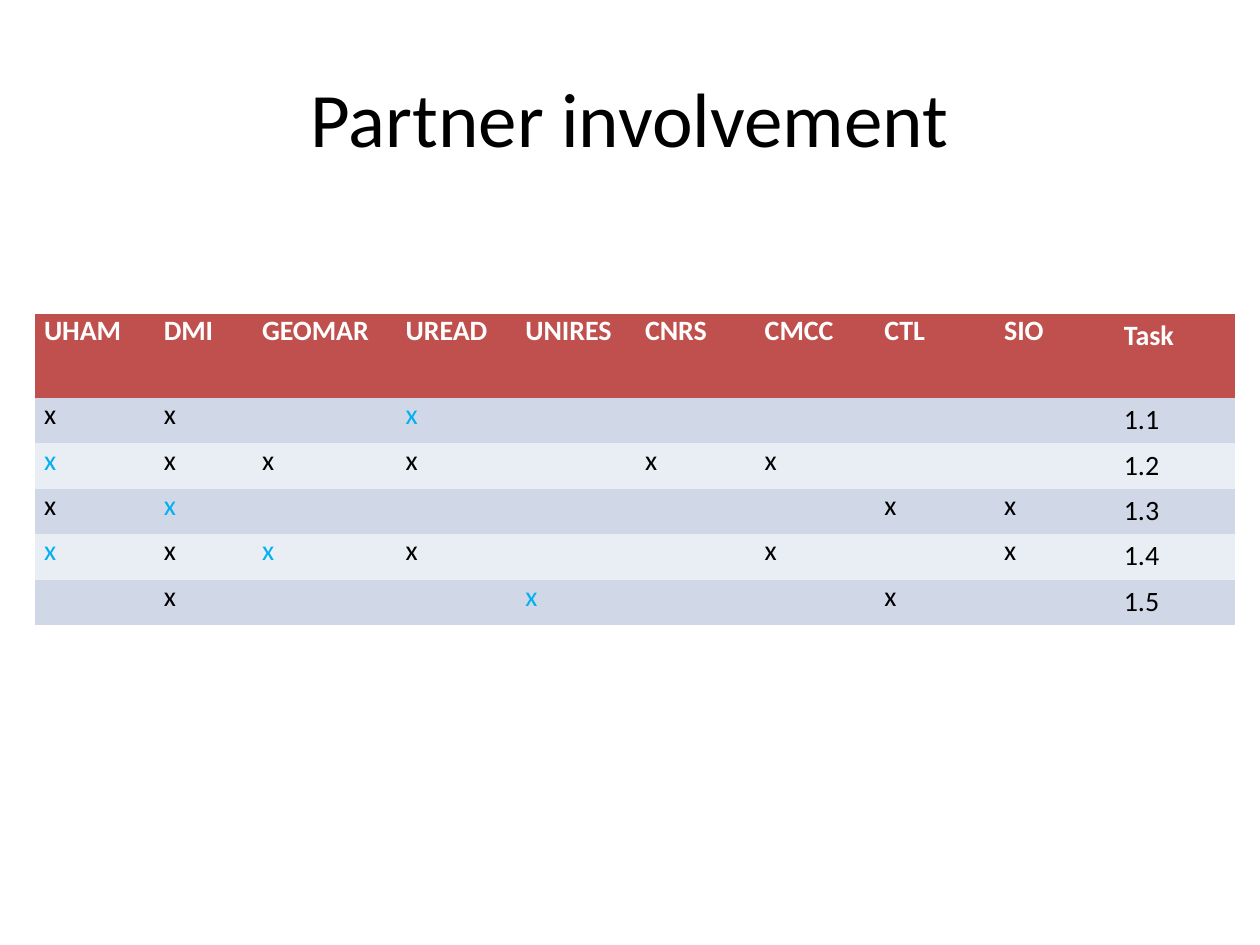
import pptx
import pptx.util
import pptx.dml.color
import pptx.enum.text

INK = {"text": "000000", "lead": "00B0F0", "head": "C0504D",
       "light": "FFFFFF", "odd": "D0D8E8", "even": "E9EDF4"}
PLAIN = "{2D5ABB26-0587-4C30-8999-92F81FD0307C}"
HEADS = ["UHAM", "DMI", "GEOMAR", "UREAD", "UNIRES",
         "CNRS", "CMCC", "CTL", "SIO", "Task"]
TASKS = {
    "1.1": "xx.L.....",
    "1.2": "Lxxx.xx..",
    "1.3": "xL.....xx",
    "1.4": "LxLx..x.x",
    "1.5": ".x..L..x.",
}
WIDTHS = [0.95, 0.78, 1.14] + [0.95] * 7
HIGHS = [0.67] + [0.36] * len(TASKS)
ALIGN = pptx.enum.text.PP_ALIGN
inch = pptx.util.Inches


def tint(name):
    return pptx.dml.color.RGBColor.from_string(INK[name])


def style(para, size, color, align, bold=False):
    para.alignment = align
    font = para.font
    font.name = "Calibri"
    font.size = pptx.util.Pt(size)
    font.bold = bold
    font.color.rgb = tint(color)


def add_title(slide, text):
    box = slide.shapes.add_textbox(inch(0.5), inch(0.3), inch(9), inch(1.25))
    frame = box.text_frame
    frame.word_wrap = True
    frame.vertical_anchor = pptx.enum.text.MSO_ANCHOR.MIDDLE
    para = frame.paragraphs[0]
    para.text = text
    style(para, 44, "text", ALIGN.CENTER)


def fill_cell(cell, text, color, back, last, bold):
    cell.fill.solid()
    cell.fill.fore_color.rgb = tint(back)
    cell.margin_left = cell.margin_right = inch(0.07)
    cell.margin_top = cell.margin_bottom = 0
    para = cell.text_frame.paragraphs[0]
    para.text = text
    style(para, 16, color, ALIGN.LEFT if last else ALIGN.JUSTIFY, bold)
    if last:
        para.line_spacing = 1.15


def add_grid(slide):
    rows = [HEADS] + [list(marks) + [task] for task, marks in TASKS.items()]
    shape = slide.shapes.add_table(
        len(rows), len(HEADS), inch(0.28), inch(2.49),
        inch(sum(WIDTHS)), inch(sum(HIGHS)))
    table = shape.table
    table.horz_banding = False
    table._tbl.tblPr[0].text = PLAIN
    for col, width in zip(table.columns, WIDTHS):
        col.width = inch(width)
    for row, high in zip(table.rows, HIGHS):
        row.height = inch(high)
    for r, row in enumerate(rows):
        back = "head" if r == 0 else "odd" if r % 2 else "even"
        for c, mark in enumerate(row):
            color = "light" if r == 0 else "lead" if mark == "L" else "text"
            text = {"L": "x", ".": ""}.get(mark, mark)
            last = c == len(HEADS) - 1
            fill_cell(table.cell(r, c), text, color, back, last, r == 0)


def main():
    deck = pptx.Presentation()
    deck.slide_width, deck.slide_height = inch(10), inch(7.5)
    slide = deck.slides.add_slide(deck.slide_layouts[6])
    add_title(slide, "Partner involvement")
    add_grid(slide)
    deck.save("out.pptx")


if __name__ == "__main__":
    main()
